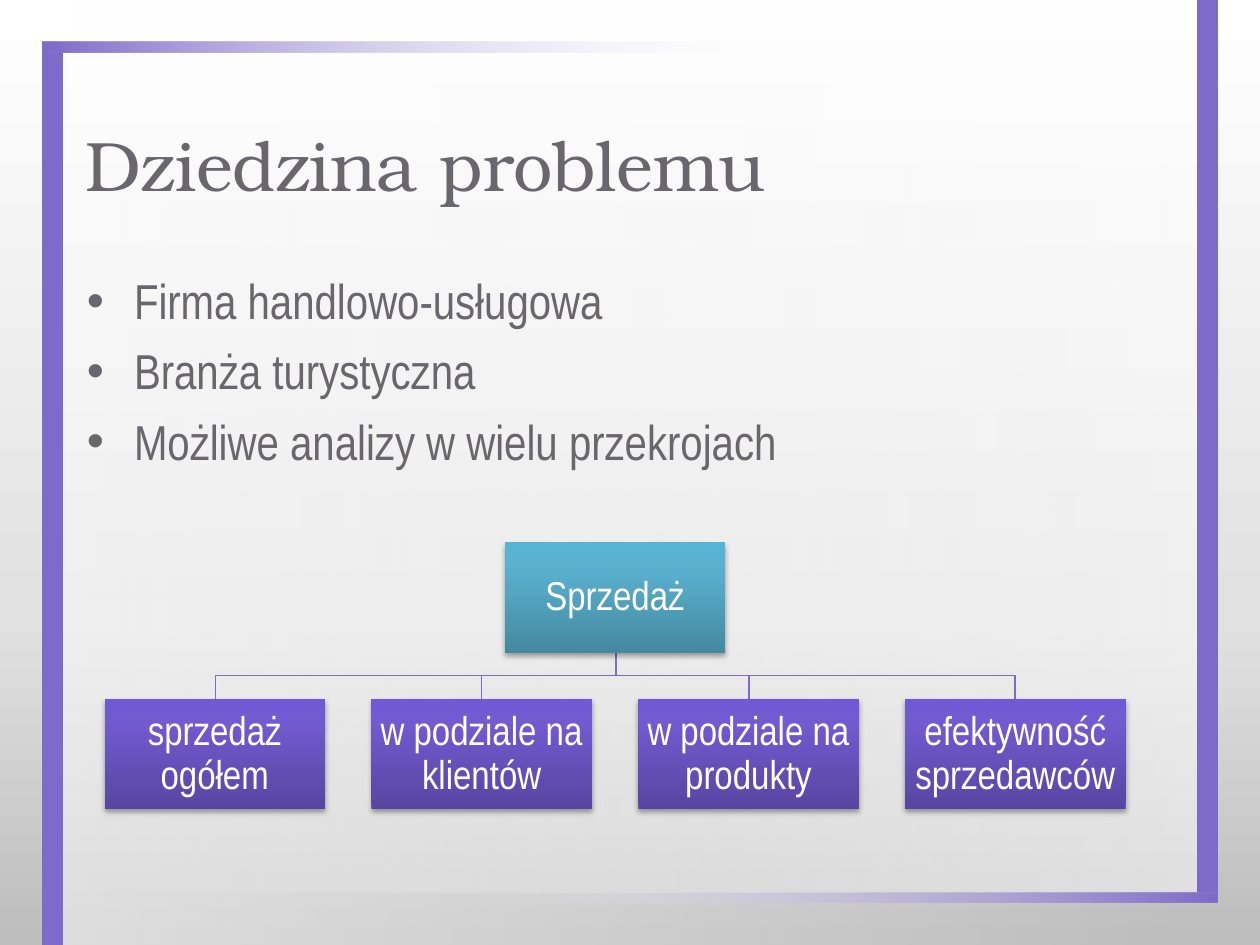
"""Build the slide on the problem domain, with the sales breakdown tree."""
import pptx
import pptx.dml.color
import pptx.enum.shapes
import pptx.enum.text
import pptx.oxml
import pptx.oxml.ns
import pptx.util
from lxml import etree

Pt = pptx.util.Pt
RECTANGLE = pptx.enum.shapes.MSO_SHAPE.RECTANGLE
ANCHOR = pptx.enum.text.MSO_ANCHOR
qn = pptx.oxml.ns.qn
COLORS = {
    "accent": "7E6BC9", "text": "69676D", "white": "FFFFFF", "shadow": "000000",
    "gray_low": "BDBDBD", "gray_mid": "E1E1E1",
    "teal_low": "4589A1", "teal_mid": "5AB2D0", "teal_top": "58B4D4",
    "violet_low": "5845A1", "violet_mid": "725AD0", "violet_top": "7158D4",
}
RGB = {name: pptx.dml.color.RGBColor.from_string(value) for name, value in COLORS.items()}


def paint_gradient(fill, element, stops, angle):
    fill.gradient()
    fill.gradient_angle = angle
    stop_list = next(element.iter(qn("a:gsLst")))
    for old_stop in list(stop_list):
        stop_list.remove(old_stop)
    for position, color, opacity in stops:
        stop = etree.SubElement(stop_list, qn("a:gs"), pos=str(position * 1000))
        shade = etree.SubElement(stop, qn("a:srgbClr"), val=COLORS[color])
        if opacity < 100:
            etree.SubElement(shade, qn("a:alpha"), val=str(opacity * 1000))


def style_text(paragraph, font_name, size, color):
    paragraph.font.name = font_name
    paragraph.font.size = Pt(size)
    paragraph.font.color.rgb = RGB[color]


presentation = pptx.Presentation()
presentation.slide_width, presentation.slide_height = Pt(720), Pt(540)
slide = presentation.slides.add_slide(presentation.slide_layouts[6])
shapes = slide.shapes
paint_gradient(slide.background.fill, slide.element,
               [(0, "gray_low", 100), (35, "gray_mid", 100), (100, "white", 100)], 90)

veil = [(0, "white", 50), (100, "white", 0)]
fade = [(0, "accent", 100), (65, "white", 0), (100, "white", 0)]
frame_parts = [
    (36, 0, 648, 510, veil, False),
    (36, 30, 648, 510, veil, True),
    (684, 0, 12, 510, None, False),
    (24, 30, 12, 510, None, False),
    (36, 510, 660, 6, fade, False),
    (24, 24, 660, 6, fade, True),
]
for left, top, width, height, stops, mirrored in frame_parts:
    panel = shapes.add_shape(RECTANGLE, Pt(left), Pt(top), Pt(width), Pt(height))
    panel.shadow.inherit = False
    panel.line.fill.background()
    if stops:
        paint_gradient(panel.fill, panel.element, stops, 180)
    else:
        panel.fill.solid()
        panel.fill.fore_color.rgb = RGB["accent"]
    if mirrored:
        panel.element.spPr.find(qn("a:xfrm")).set("flipH", "1")

title = shapes.add_textbox(Pt(42), Pt(36), Pt(636), Pt(85)).text_frame
title.word_wrap = True
title.vertical_anchor = ANCHOR.BOTTOM
title.text = "Dziedzina problemu"
style_text(title.paragraphs[0], "TeX Gyre Bonum", 40, "text")

points = shapes.add_textbox(Pt(42.5), Pt(151.2), Pt(636), Pt(305)).text_frame
points.word_wrap = True
points.text = "Firma handlowo-usługowa\nBranża turystyczna\nMożliwe analizy w wielu przekrojach"
for index, point in enumerate(points.paragraphs):
    properties = point._p.get_or_add_pPr()
    properties.set("marL", str(Pt(27)))
    properties.set("indent", str(-Pt(27)))
    etree.SubElement(properties, qn("a:buFont"), typeface="Arial")
    etree.SubElement(properties, qn("a:buChar"), char="•")
    point.space_before = Pt(6.5 if index else 0)
    style_text(point, "Arial Narrow", 28, "text")

box_width, box_height, pitch = 126, 63, 152.5
root_left, root_top, branch_left, branch_top = 288.5, 310, 59.75, 399.5
root_middle, root_bottom = root_left + box_width / 2, root_top + box_height
bend = (root_bottom + branch_top) / 2
branches = ["sprzedaż ogółem", "w podziale na klientów",
            "w podziale na produkty", "efektywność sprzedawców"]
boxes = [("Sprzedaż", root_left, root_top, "teal")]
for index, label in enumerate(branches):
    left = branch_left + index * pitch
    boxes.append((label, left, branch_top, "violet"))
    middle = left + box_width / 2
    builder = shapes.build_freeform(root_middle, root_bottom, scale=Pt(1))
    builder.add_line_segments([(root_middle, bend), (middle, bend), (middle, branch_top)],
                              close=False)
    link = builder.convert_to_shape()
    link.shadow.inherit = False
    link.fill.background()
    link.line.color.rgb = RGB["accent"]
    link.line.width = Pt(0.75)

for label, left, top, hue in boxes:
    box = shapes.add_shape(RECTANGLE, Pt(left), Pt(top), Pt(box_width), Pt(box_height))
    paint_gradient(box.fill, box.element, [(0, hue + "_low", 100), (80, hue + "_mid", 100),
                                           (100, hue + "_top", 100)], 90)
    box.line.fill.background()
    box.shadow.inherit = False
    effects = box.element.spPr.find(qn("a:effectLst"))
    shadow = etree.SubElement(effects, qn("a:outerShdw"), blurRad=str(Pt(3.1)),
                              dist=str(Pt(1.8)), dir="5400000", rotWithShape="0")
    shadow_color = etree.SubElement(shadow, qn("a:srgbClr"), val=COLORS["shadow"])
    etree.SubElement(shadow_color, qn("a:alpha"), val="35000")
    frame = box.text_frame
    frame.word_wrap = True
    frame.vertical_anchor = ANCHOR.MIDDLE
    frame.margin_left = frame.margin_right = Pt(1.15)
    frame.margin_top = frame.margin_bottom = Pt(1.15)
    frame.text = label
    caption = frame.paragraphs[0]
    caption.alignment = pptx.enum.text.PP_ALIGN.CENTER
    caption.line_spacing = 0.9
    style_text(caption, "Arial Narrow", 23, "white")

presentation.save("out.pptx")
